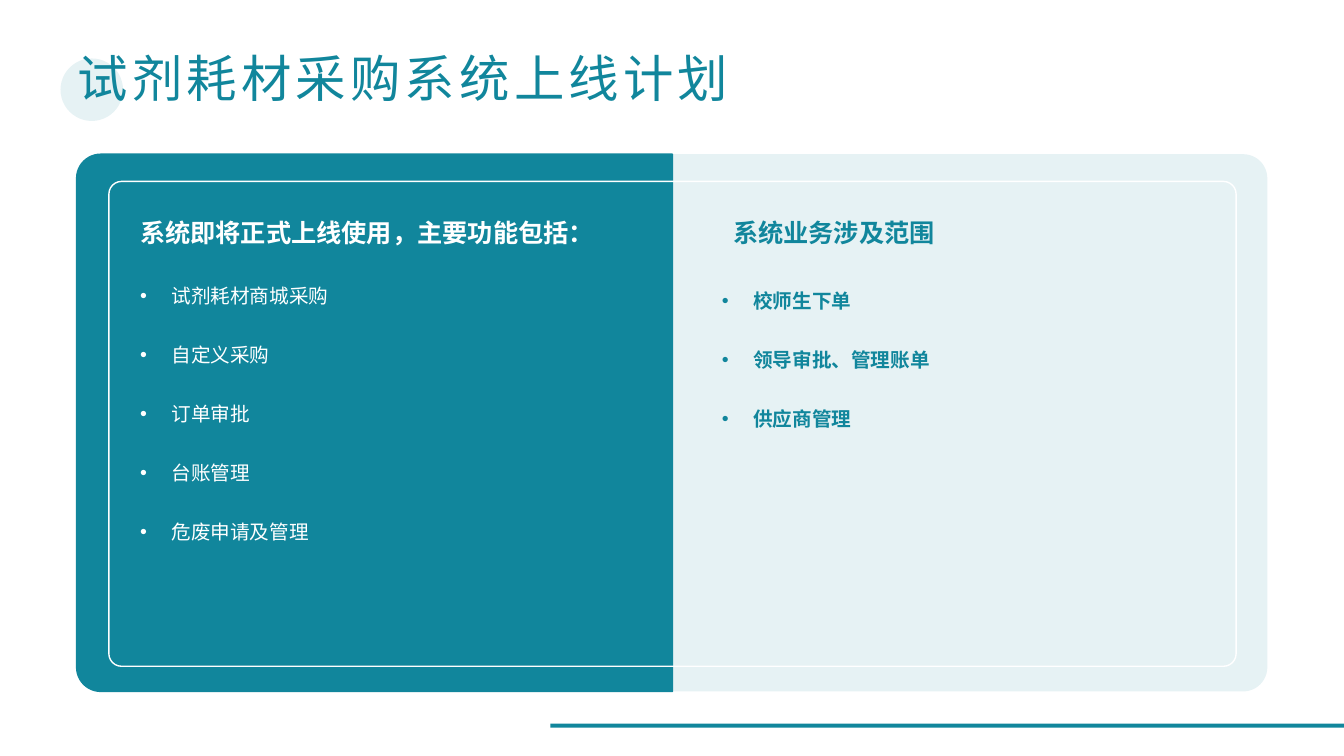
import math
from dataclasses import dataclass

from lxml import etree
from pptx import Presentation
from pptx.dml.color import RGBColor
from pptx.enum import shapes, text
from pptx.oxml import ns
from pptx.util import Inches, Pt


@dataclass(frozen=True)
class Theme:
    teal: RGBColor = RGBColor(0x11, 0x86, 0x9C)
    white: RGBColor = RGBColor(0xFF, 0xFF, 0xFF)
    tint: int = 10
    title_font: str = "Roboto"
    body_font: str = "Karla"
    title_size: int = 36
    heading_size: int = 18
    list_size: int = 14


THEME = Theme()
FUNCTIONS = ["试剂耗材商城采购", "自定义采购", "订单审批", "台账管理", "危废申请及管理"]
SCOPE = ["校师生下单", "领导审批、管理账单", "供应商管理"]


def inches(*lengths):
    return [Inches(length) for length in lengths]


def paint(shape, color, opacity=100):
    shape.shadow.inherit = False
    shape.line.fill.background()
    shape.fill.solid()
    shape.fill.fore_color.rgb = color
    if opacity < 100:
        tone = shape.fill._xPr.find(".//" + ns.qn("a:srgbClr"))
        etree.SubElement(tone, ns.qn("a:alpha"), val=str(opacity * 1000))


def outline(shape, color):
    shape.line.color.rgb = color
    shape.line.width = Pt(1)


def add_preset(slide, kind, at):
    return slide.shapes.add_shape(kind, *inches(*at))


def add_half_panel(slide, inner, outer, opacity=100):
    """Panel with square corners at x = inner and round ones at x = outer."""
    top, bottom, radius, steps = 1.53, 6.86, 0.24, 12
    side = 1 if outer > inner else -1
    arc = [math.pi / 2 * step / steps for step in range(steps + 1)]
    center = outer - side * radius
    upper = [(center + side * radius * math.sin(a),
              top + radius * (1 - math.cos(a))) for a in arc]
    lower = [(x, top + bottom - y) for x, y in reversed(upper)]
    points = [inches(*point) for point in upper + lower + [(inner, bottom)]]
    builder = slide.shapes.build_freeform(*inches(inner, top), scale=1.0)
    builder.add_line_segments(points, close=True)
    panel = builder.convert_to_shape()
    paint(panel, THEME.teal, opacity)
    return panel


def add_span(para, words, font, size, color, bold=False):
    span = para.add_run()
    span.text = words
    span.font.name = font
    span.font.size = Pt(size)
    span.font.color.rgb = color
    span.font.bold = bold
    return span


def add_frame(slide, at, anchor):
    frame = slide.shapes.add_textbox(*inches(*at)).text_frame
    frame.word_wrap = True
    frame.vertical_anchor = anchor
    frame.margin_left = frame.margin_right = 0
    frame.margin_top = frame.margin_bottom = 0
    return frame


def add_heading(slide, at, words, color):
    para = add_frame(slide, at, text.MSO_ANCHOR.BOTTOM).paragraphs[0]
    para.line_spacing = 1.5
    add_span(para, words, THEME.body_font, THEME.heading_size, color, True)


def add_list(slide, at, items, color, bold=False):
    frame = add_frame(slide, at, text.MSO_ANCHOR.TOP)
    for index, item in enumerate(items):
        para = frame.add_paragraph() if index else frame.paragraphs[0]
        props = para._p.get_or_add_pPr()
        props.set("marL", str(Inches(0.31)))
        props.set("indent", str(-Inches(0.31)))
        etree.SubElement(props, ns.qn("a:buFont"), typeface="Arial")
        etree.SubElement(props, ns.qn("a:buChar"), char="•")
        para.line_spacing = 2.5
        add_span(para, item, THEME.body_font, THEME.list_size, color, bold)


def set_title(slide, words):
    title = slide.shapes.title
    title.left, title.top, title.width, title.height = inches(0.67, 0.38, 12, 0.77)
    frame = title.text_frame
    frame.word_wrap = True
    frame.auto_size = text.MSO_AUTO_SIZE.NONE
    frame.vertical_anchor = text.MSO_ANCHOR.MIDDLE
    para = frame.paragraphs[0]
    para.alignment = text.PP_ALIGN.LEFT
    span = add_span(para, words, THEME.title_font, THEME.title_size, THEME.teal)
    span._r.get_or_add_rPr().set("spc", "300")
    # Bring the title in front of the circle
    slide.shapes._spTree.append(title._element)


def main():
    deck = Presentation()
    deck.slide_width, deck.slide_height = inches(13.33, 7.5)
    slide = deck.slides.add_slide(deck.slide_layouts[5])
    kinds = shapes.MSO_SHAPE

    # Footer bar and title circle
    paint(add_preset(slide, kinds.RECTANGLE, (5.46, 7.18, 7.87, 0.04)), THEME.teal)
    paint(add_preset(slide, kinds.OVAL, (0.6, 0.58, 0.62, 0.62)),
          THEME.teal, THEME.tint)

    # Two halves of the card
    add_half_panel(slide, 6.67, 12.57, THEME.tint)
    outline(add_half_panel(slide, 6.67, 0.76), THEME.teal)

    set_title(slide, "试剂耗材采购系统上线计划")

    # Inner frame
    border = add_preset(slide, kinds.ROUNDED_RECTANGLE, (1.08, 1.8, 11.18, 4.81))
    border.adjustments[0] = 0.026
    border.shadow.inherit = False
    border.fill.background()
    outline(border, THEME.white)

    # Left: functions; right: scope
    add_list(slide, (1.39, 2.47, 4.15, 3.8), FUNCTIONS, THEME.white)
    add_heading(slide, (1.39, 1.98, 4.76, 0.48),
                "系统即将正式上线使用，主要功能包括：", THEME.white)
    add_heading(slide, (7.27, 1.98, 4.31, 0.48), "系统业务涉及范围", THEME.teal)
    add_list(slide, (7.16, 2.52, 4.15, 3.8), SCOPE, THEME.teal, bold=True)

    deck.save("out.pptx")


if __name__ == "__main__":
    main()
